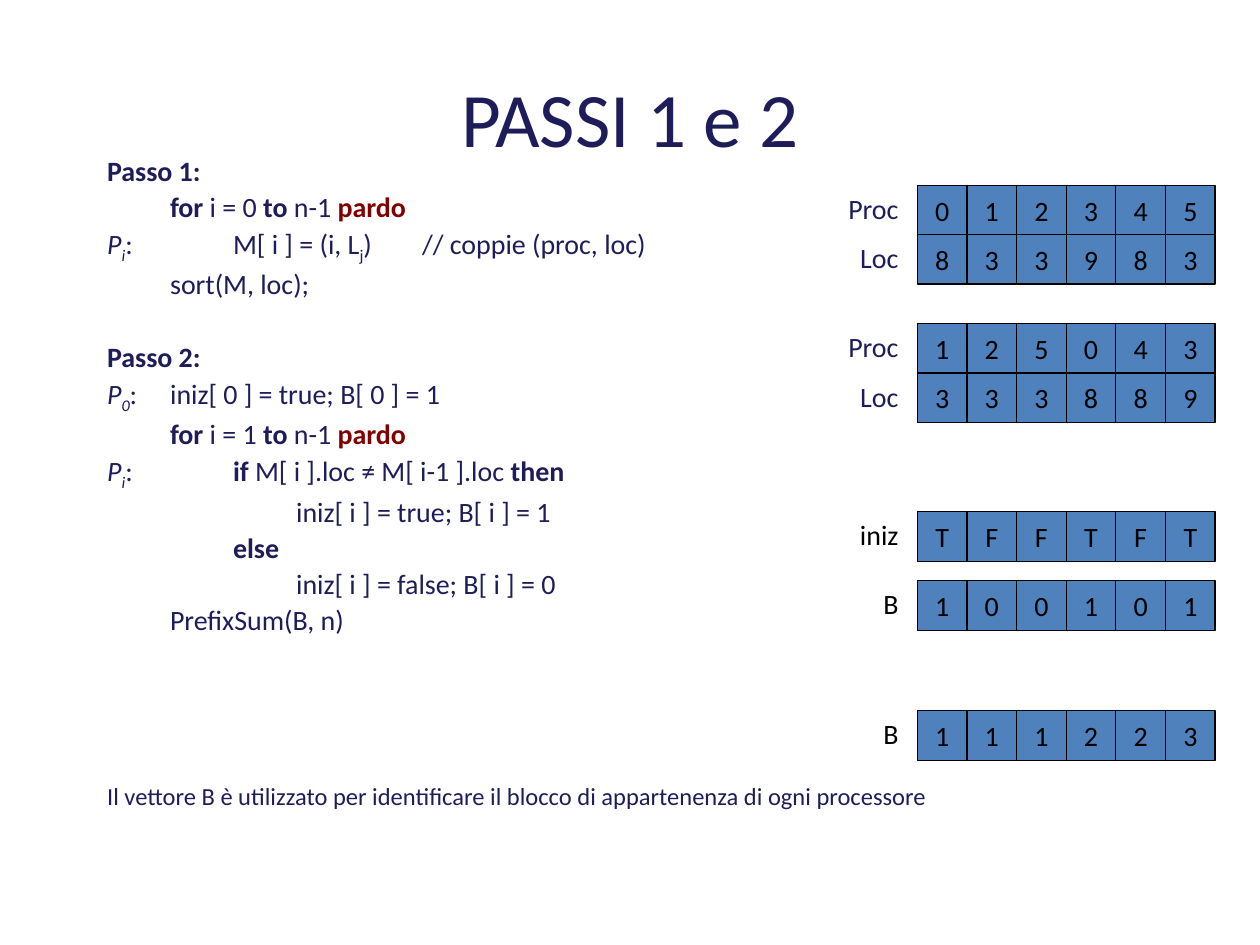
from dataclasses import dataclass

from lxml.etree import SubElement
from pptx import Presentation
from pptx.dml.color import RGBColor
from pptx.enum.shapes import MSO_SHAPE
from pptx.enum.text import MSO_ANCHOR, MSO_AUTO_SIZE, PP_ALIGN
from pptx.oxml.ns import qn
from pptx.util import Inches, Pt


@dataclass(frozen=True)
class Theme:
    font: str = "Calibri"
    navy: RGBColor = RGBColor.from_string("1E1D5A")
    maroon: RGBColor = RGBColor.from_string("800000")
    black: RGBColor = RGBColor.from_string("000000")
    cell_blue: RGBColor = RGBColor.from_string("4F81BD")
    title_size: Pt = Pt(44)
    text_size: Pt = Pt(16)
    note_size: Pt = Pt(14)


theme = Theme()


def add_run(paragraph, text, size=theme.text_size, color=theme.navy,
            bold=False, italic=False, subscript=False):
    run = paragraph.add_run()
    run.text = text
    run.font.name = theme.font
    run.font.size = size
    run.font.color.rgb = color
    run.font.bold = bold
    run.font.italic = italic
    if subscript:
        run._r.get_or_add_rPr().set("baseline", "-25000")


def format_code_paragraph(paragraph, space_before):
    """Remove the bullet and indent, and set a tab stop every half inch."""
    paragraph.space_before = Pt(space_before)
    properties = paragraph._p.get_or_add_pPr()
    properties.set("marL", "0")
    properties.set("indent", "0")
    SubElement(properties, qn("a:buNone"))
    tab_stops = SubElement(properties, qn("a:tabLst"))
    for stop in range(1, 6):
        SubElement(tab_stops, qn("a:tab"), pos=str(Inches(0.5 * stop)), algn="l")


prs = Presentation()
prs.slide_width, prs.slide_height = Inches(10), Inches(7.5)
slide = prs.slides.add_slide(prs.slide_layouts[1])

# Title
title = slide.shapes.title
title.left, title.top = Inches(0.5), Inches(0.3)
title.width, title.height = Inches(9), Inches(1.25)
heading = title.text_frame.paragraphs[0]
heading.alignment = PP_ALIGN.CENTER
add_run(heading, "PASSI 1 e 2", size=theme.title_size)

# Pseudocode: each line is its space before in points, then its runs
PLAIN = {}
BOLD = {"bold": True}
PARDO = {"bold": True, "color": theme.maroon}
ITALIC = {"italic": True}
SUB = {"subscript": True}
ITALIC_SUB = {"italic": True, "subscript": True}
NOTE = {"size": theme.note_size}

LINE_GAP, STEP_GAP, NOTE_GAP = 1.5, 22.5, 82.5

code_lines = [
    (LINE_GAP, [("Passo 1:", BOLD)]),
    (LINE_GAP, [("\t", PLAIN), ("for", BOLD), (" i = 0 ", PLAIN), ("to", BOLD),
                (" n-1 ", PLAIN), ("pardo", PARDO)]),
    (LINE_GAP, [("P", ITALIC), ("i", ITALIC_SUB), (":\t\tM[ i ] = (i, L", PLAIN),
                ("j", SUB), (")\t// coppie (proc, loc)", PLAIN)]),
    (LINE_GAP, [("\tsort(M, loc);", PLAIN)]),
    (STEP_GAP, [("Passo 2:", BOLD)]),
    (LINE_GAP, [("P", ITALIC), ("0", ITALIC_SUB),
                (":\tiniz[ 0 ] = true; B[ 0 ] = 1", PLAIN)]),
    (LINE_GAP, [("\t", PLAIN), ("for", BOLD), (" i = 1 ", PLAIN), ("to", BOLD),
                (" n-1 ", PLAIN), ("pardo", PARDO)]),
    (LINE_GAP, [("P", ITALIC), ("i", ITALIC_SUB), (":\t\t", PLAIN), ("if", BOLD),
                (" M[ i ].loc ≠ M[ i-1 ].loc ", PLAIN), ("then", BOLD)]),
    (LINE_GAP, [("\t\t\tiniz[ i ] = true; B[ i ] = 1", PLAIN)]),
    (LINE_GAP, [("\t\t", PLAIN), ("else", BOLD)]),
    (LINE_GAP, [("\t\t\tiniz[ i ] = false; B[ i ] = 0", PLAIN)]),
    (LINE_GAP, [("\tPrefixSum(B, n)", PLAIN)]),
    (NOTE_GAP, [("Il vettore B è utilizzato per identificare il blocco di "
                 "appartenenza di ogni processore", NOTE)]),
]

pseudocode = slide.placeholders[1]
pseudocode.left, pseudocode.top = Inches(0.75), Inches(1.17)
pseudocode.width, pseudocode.height = Inches(9.08), Inches(5.7)
code_frame = pseudocode.text_frame
code_frame.auto_size = MSO_AUTO_SIZE.NONE
for index, (space_before, runs) in enumerate(code_lines):
    code_line = code_frame.add_paragraph() if index else code_frame.paragraphs[0]
    format_code_paragraph(code_line, space_before)
    for text, style in runs:
        add_run(code_line, text, **style)

# Vectors: label, label width, label colour, top, values
vectors = [
    ("Proc", 0.66, theme.navy, 1.47, "012345"),
    ("Loc", 0.56, theme.navy, 1.86, "833983"),
    ("Proc", 0.66, theme.navy, 2.57, "125043"),
    ("Loc", 0.56, theme.navy, 2.96, "333889"),
    ("iniz", 0.53, theme.black, 4.06, "TFFTFT"),
    ("B", 0.35, theme.black, 4.61, "100101"),
    ("B", 0.35, theme.black, 5.64, "111223"),
]
CELLS_LEFT, LABEL_RIGHT = Inches(7.28), Inches(7.23)
CELL = Inches(1.97) // 5

for name, label_width, label_color, top, values in vectors:
    vector = slide.shapes.add_group_shape()
    for column, value in enumerate(values):
        cell = vector.shapes.add_shape(MSO_SHAPE.RECTANGLE, CELLS_LEFT + column * CELL,
                                       Inches(top), CELL, CELL)
        cell.shadow.inherit = False
        cell.fill.solid()
        cell.fill.fore_color.rgb = theme.cell_blue
        cell.line.color.rgb = theme.black
        cell.line.width = Pt(0.75)
        cell.text_frame.word_wrap = False
        cell.text_frame.vertical_anchor = MSO_ANCHOR.MIDDLE
        cell_line = cell.text_frame.paragraphs[0]
        cell_line.alignment = PP_ALIGN.CENTER
        add_run(cell_line, value, color=theme.black)

    label = vector.shapes.add_textbox(LABEL_RIGHT - Inches(label_width), Inches(top),
                                      Inches(label_width), Inches(0.37))
    label.text_frame.word_wrap = False
    label.text_frame.auto_size = MSO_AUTO_SIZE.SHAPE_TO_FIT_TEXT
    label_line = label.text_frame.paragraphs[0]
    label_line.alignment = PP_ALIGN.RIGHT
    add_run(label_line, name, color=label_color)

prs.save("out.pptx")
